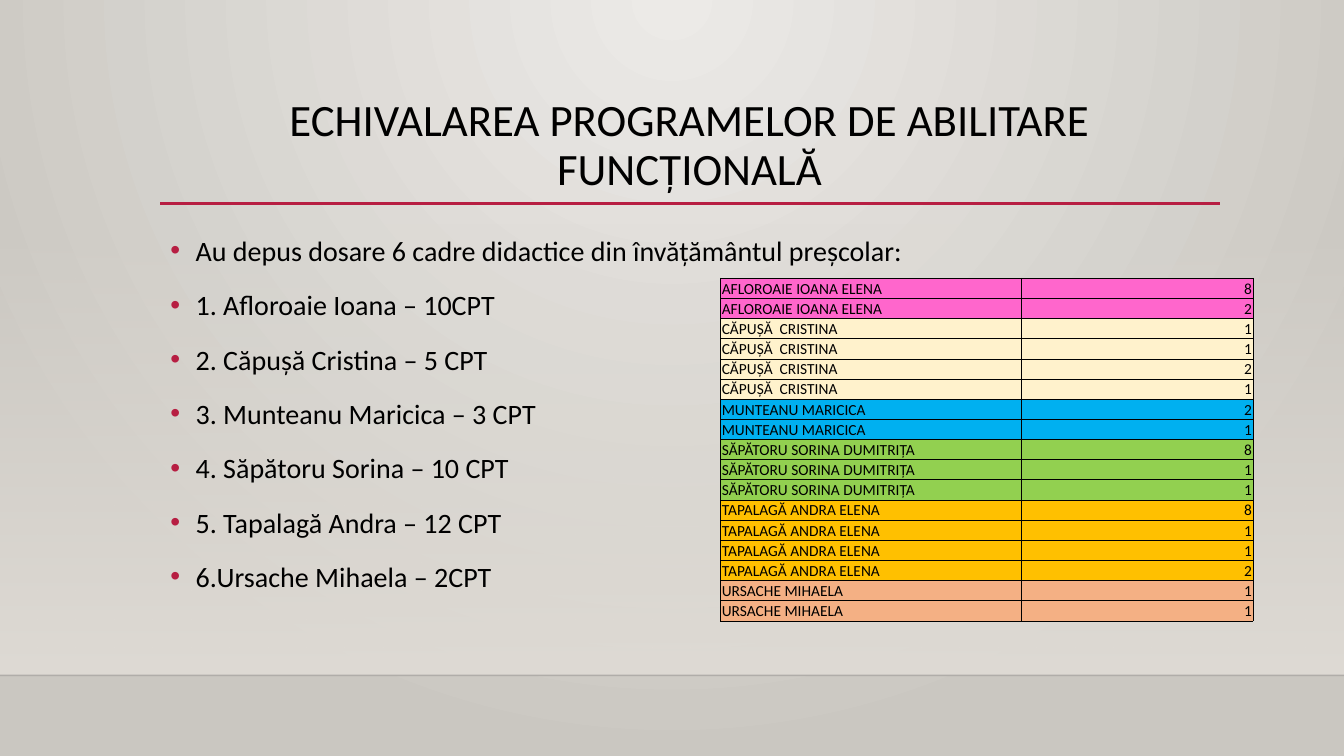
from lxml.etree import SubElement
from pptx import Presentation
from pptx.dml.color import RGBColor
from pptx.enum.shapes import MSO_CONNECTOR, MSO_SHAPE
from pptx.enum.text import MSO_ANCHOR, MSO_AUTO_SIZE, PP_ALIGN
from pptx.oxml import parse_xml
from pptx.oxml.ns import nsdecls, qn
from pptx.util import Inches, Pt


def color(value):
    return RGBColor.from_string(value)


def apply_gradient(owner, first, last, first_alpha, direction):
    empty_fill = owner.find(".//" + qn("a:noFill"))
    gradient = parse_xml(
        f'<a:gradFill {nsdecls("a")} rotWithShape="1"><a:gsLst>'
        f'<a:gs pos="0"><a:srgbClr val="{first}"><a:alpha val="{first_alpha}"/></a:srgbClr></a:gs>'
        f'<a:gs pos="100000"><a:srgbClr val="{last}"/></a:gs>'
        f"</a:gsLst>{direction}</a:gradFill>"
    )
    empty_fill.getparent().replace(empty_fill, gradient)


FONT = "Calibri"
BLACK = "000000"
ACCENT = "B71E42"

presentation = Presentation()
presentation.slide_width = Inches(13.33)
presentation.slide_height = Inches(7.5)
column = presentation.slide_width / 100
row = presentation.slide_height / 100
content_left = int(11.93 * column)
content_width = int(78.77 * column)
floor_top = int(89.33 * row)

slide = presentation.slides.add_slide(presentation.slide_layouts[1])
slide.background.fill.background()
apply_gradient(
    slide.element, "ECEAE7", "CAC7C1", 100000,
    '<a:path path="circle"><a:fillToRect l="43000" t="0" r="43000" b="100000"/></a:path>',
)

wall_top = int(29.47 * row)
wall = slide.shapes.add_shape(
    MSO_SHAPE.RECTANGLE, 0, wall_top, presentation.slide_width, floor_top - wall_top
)
wall.shadow.inherit = False
wall.fill.background()
apply_gradient(wall.element, "DFDBD5", "DFDBD5", 0, '<a:lin ang="5400000" scaled="0"/>')
wall.line.fill.background()

rules = [
    (0, presentation.slide_width, floor_top, "000001", 1, 20000),
    (content_left, int(90.77 * column), int(26.93 * row), ACCENT, 2.5, 100000),
]
for start, end, level, shade, weight, alpha in rules:
    rule = slide.shapes.add_connector(MSO_CONNECTOR.STRAIGHT, start, level, end, level)
    rule.line.color.rgb = color(shade)
    rule.line.width = Pt(weight)
    shade_element = rule.element.find(".//" + qn("a:srgbClr"))
    SubElement(shade_element, qn("a:alpha"), val=str(alpha))
    SubElement(rule.element.spPr, qn("a:effectLst"))

title = slide.shapes.title
body = slide.placeholders[1]
title.text_frame.text = "ECHIVALAREA PROGRAMELOR DE ABILITARE FUNCȚIONALĂ"
body.text_frame.text = "\n".join([
    "Au depus dosare 6 cadre didactice din învățământul preșcolar:",
    "1. Afloroaie Ioana – 10CPT",
    "2. Căpușă Cristina – 5 CPT",
    "3. Munteanu Maricica – 3 CPT",
    "4. Săpătoru Sorina – 10 CPT",
    "5. Tapalagă Andra – 12 CPT",
    "6.Ursache Mihaela – 2CPT",
])

placeholders = [
    (title, 11.73, 15.33, MSO_ANCHOR.MIDDLE, PP_ALIGN.CENTER, 0.9, 32),
    (body, 29.33, 50.27, MSO_ANCHOR.TOP, PP_ALIGN.LEFT, 1.2, 20),
]
for placeholder, top, height, anchor, alignment, spacing, size in placeholders:
    placeholder.element.getparent().append(placeholder.element)
    placeholder.left, placeholder.top = content_left, int(top * row)
    placeholder.width, placeholder.height = content_width, int(height * row)
    frame = placeholder.text_frame
    frame.word_wrap = True
    frame.auto_size = MSO_AUTO_SIZE.NONE
    frame.vertical_anchor = anchor
    for index, paragraph in enumerate(frame.paragraphs):
        if placeholder is body:
            properties = paragraph._p.get_or_add_pPr()
            properties.set("marL", str(Inches(0.25)))
            properties.set("indent", str(-Inches(0.25)))
            bullet_color = SubElement(properties, qn("a:buClr"))
            SubElement(bullet_color, qn("a:srgbClr"), val=ACCENT)
            SubElement(properties, qn("a:buFont"), typeface="Arial")
            SubElement(properties, qn("a:buChar"), char="•")
        paragraph.alignment = alignment
        paragraph.line_spacing = spacing
        paragraph.space_before = Pt(10 if index else 0)
        paragraph.font.name = FONT
        paragraph.font.size = Pt(size)
        paragraph.font.color.rgb = color(BLACK)

teachers = [
    ("AFLOROAIE IOANA ELENA", "FF66CC", [8, 2]),
    ("CĂPUȘĂ  CRISTINA", "FFF2CC", [1, 1, 2, 1]),
    ("MUNTEANU MARICICA", "00B0F0", [2, 1]),
    ("SĂPĂTORU SORINA DUMITRIȚA", "92D050", [8, 1, 1]),
    ("TAPALAGĂ ANDRA ELENA", "FFC000", [8, 1, 1, 2]),
    ("URSACHE MIHAELA", "F4B084", [1, 1]),
]
records = [(name, points, fill) for name, fill, credits in teachers for points in credits]
column_widths = [int(22.35 * column), int(17.25 * column)]
row_height = int(2.67 * row)
table = slide.shapes.add_table(
    len(records), 2, int(53.63 * column), int(36.8 * row),
    sum(column_widths), row_height * len(records),
).table
table.first_row = False
table.horz_banding = False
for table_column, width in zip(table.columns, column_widths):
    table_column.width = width

for table_row, (name, points, fill) in zip(table.rows, records):
    table_row.height = row_height
    cells = zip(table_row.cells, [name, str(points)], [PP_ALIGN.LEFT, PP_ALIGN.RIGHT])
    for cell, text, alignment in cells:
        cell.text = text
        cell.margin_left = cell.margin_right = cell.margin_top = Inches(0.01)
        cell.margin_bottom = 0
        cell.vertical_anchor = MSO_ANCHOR.BOTTOM
        paragraph = cell.text_frame.paragraphs[0]
        paragraph.alignment = alignment
        paragraph.font.name = FONT
        paragraph.font.size = Pt(11)
        paragraph.font.color.rgb = color(BLACK)
        for side in ("a:lnL", "a:lnR", "a:lnT", "a:lnB"):
            border = SubElement(cell._tc.get_or_add_tcPr(), qn(side), w=str(Pt(0.5)))
            border_fill = SubElement(border, qn("a:solidFill"))
            SubElement(border_fill, qn("a:srgbClr"), val=BLACK)
        cell.fill.solid()
        cell.fill.fore_color.rgb = color(fill)

presentation.save("out.pptx")
